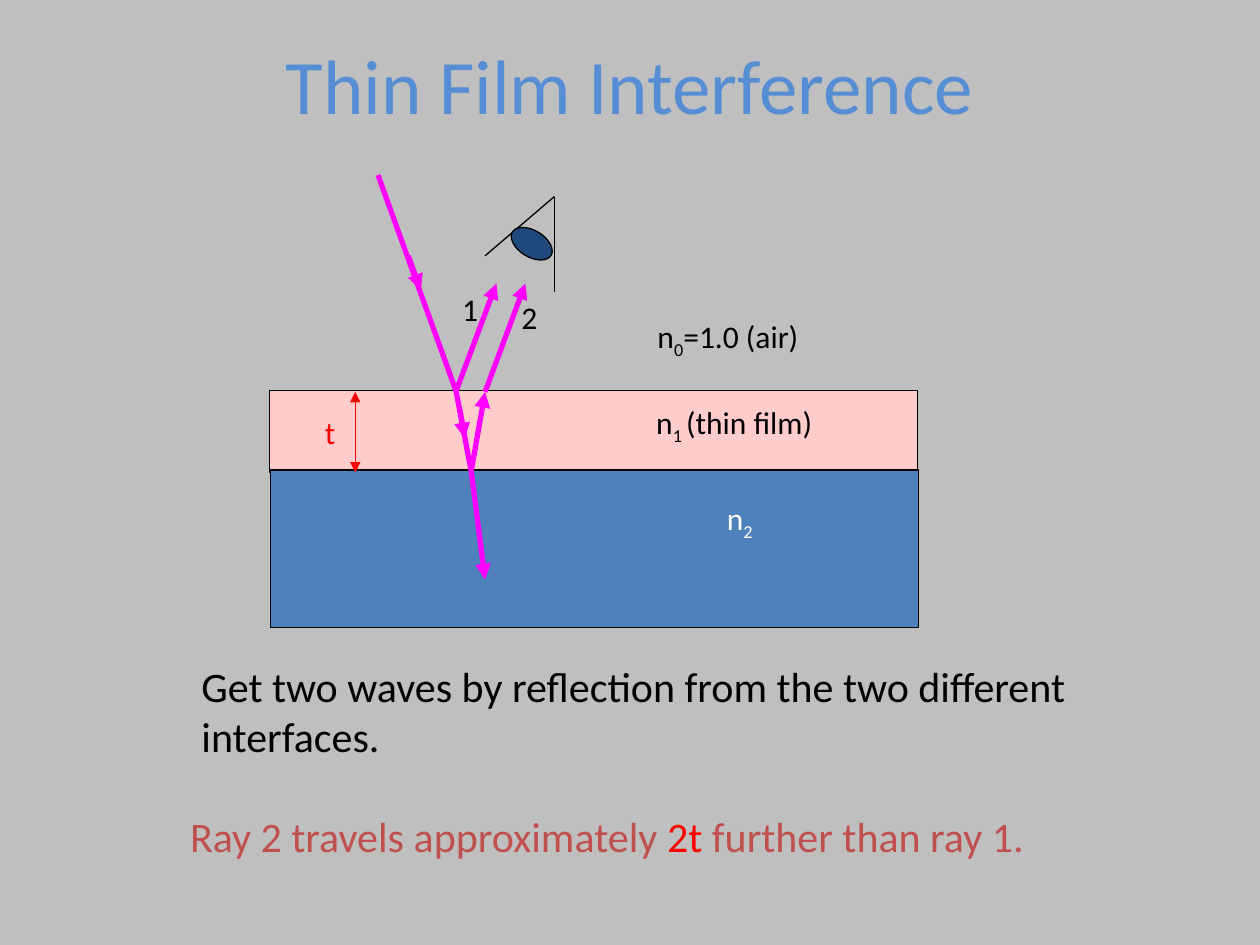
from dataclasses import dataclass

from lxml.etree import SubElement
from pptx import Presentation
from pptx.dml.color import RGBColor
from pptx.enum.shapes import MSO_CONNECTOR as Connector, MSO_SHAPE as Shape
from pptx.enum.text import MSO_ANCHOR as Anchor, PP_ALIGN as Align
from pptx.oxml.ns import qn
from pptx.util import Inches, Pt


@dataclass(frozen=True)
class Theme:
    font: str = "Calibri"
    background: str = "BFBFBF"
    title: str = "558ED5"
    ink: str = "000000"
    light: str = "FFFFFF"
    film: str = "FFCCCC"
    substrate: str = "4F81BD"
    pupil: str = "1F497D"
    ray: str = "FF00FF"
    accent: str = "FF0000"
    conclusion: str = "C0504D"
    title_size: int = 44
    body_size: int = 24
    label_size: int = 18
    thin: float = 0.75
    thick: float = 3


class SlideBuilder:
    """Draws on a grid of 100 columns by 75 rows."""

    def __init__(self, presentation, theme):
        self.theme = theme
        self.cell = presentation.slide_width / 100
        self.slide = presentation.slides.add_slide(presentation.slide_layouts[6])
        fill = self.slide.background.fill
        fill.solid()
        fill.fore_color.rgb = RGBColor.from_string(theme.background)

    def grid(self, *lengths):
        return [round(length * self.cell) for length in lengths]

    def text(self, box, runs, size, align=Align.LEFT, anchor=Anchor.TOP):
        """Each run is (text, colour) or (text, colour, baseline in percent)."""
        frame = self.slide.shapes.add_textbox(*self.grid(*box)).text_frame
        frame.word_wrap = True
        frame.vertical_anchor = anchor
        paragraph = frame.paragraphs[0]
        paragraph.alignment = align
        for content, color, *baseline in runs:
            run = paragraph.add_run()
            run.text = content
            run.font.name = self.theme.font
            run.font.size = Pt(size)
            run.font.color.rgb = RGBColor.from_string(color)
            if baseline:
                run.font._element.set("baseline", str(baseline[0] * 1000))

    def shape(self, kind, box, color, rotation=0):
        shape = self.slide.shapes.add_shape(kind, *self.grid(*box))
        shape.rotation = rotation
        shape.shadow.inherit = False
        shape.fill.solid()
        shape.fill.fore_color.rgb = RGBColor.from_string(color)
        shape.line.color.rgb = RGBColor.from_string(self.theme.ink)
        shape.line.width = Pt(self.theme.thin)

    def line(self, start, end, color, width, arrows=()):
        connector = self.slide.shapes.add_connector(
            Connector.STRAIGHT, *self.grid(*start, *end))
        connector.line.color.rgb = RGBColor.from_string(color)
        connector.line.width = Pt(width)
        properties = connector._element.spPr
        for arrow in arrows:
            SubElement(properties.find(qn("a:ln")), qn(f"a:{arrow}"), type="triangle")
        SubElement(properties, qn("a:effectLst"))

    def ray(self, start, end, arrow=True):
        self.line(start, end, self.theme.ray, self.theme.thick,
                  ["tailEnd"] if arrow else [])


def main():
    theme = Theme()
    presentation = Presentation()
    presentation.slide_width = Inches(10)
    presentation.slide_height = Inches(7.5)
    builder = SlideBuilder(presentation, theme)

    # Title
    builder.text((7.5, 0.4, 85, 12.5), [("Thin Film Interference", theme.title)],
                 theme.title_size, Align.CENTER, Anchor.MIDDLE)

    # Film on its substrate
    builder.shape(Shape.RECTANGLE, (21.4, 31, 51.4, 6.5), theme.film)
    builder.shape(Shape.RECTANGLE, (21.5, 37.3, 51.4, 12.5), theme.substrate)

    # Refractive indices
    for box, index, note, color in (
            ((51.1, 31.5, 21.4, 4), "1 ", "(thin film)", theme.ink),
            ((56.7, 39.1, 7.8, 5), "2", "", theme.light),
            ((51.2, 24.7, 24, 5), "0", "=1.0 (air)", theme.ink)):
        runs = [("n", color), (index, color, -25)]
        if note:
            runs.append((note, color))
        builder.text(box, runs, theme.label_size)

    # Film thickness
    builder.line((28.2, 31.1), (28.2, 37.5), theme.accent, theme.thin,
                 ["headEnd", "tailEnd"])

    # Eye
    eye_corner = (44, 15.6)
    for lid_end in ((38.5, 20.3), (44, 23.2)):
        builder.line(eye_corner, lid_end, theme.ink, theme.thin)
    builder.shape(Shape.OVAL, (40.4, 18.3, 3.6, 2.1), theme.pupil, 31.3)

    # Rays: incoming, reflected at each interface, and transmitted
    entry, bounce, leave = (36.2, 31.05), (37.4, 37.4), (38.5, 31.1)
    builder.ray((30, 13.9), entry, arrow=False)
    builder.ray((32.4, 20.3), (33.4, 23))
    builder.ray(entry, bounce, arrow=False)
    builder.ray((36.5, 32.5), (36.9, 34.8))
    builder.ray(entry, (39.4, 22.5))
    builder.ray(bounce, leave)
    builder.ray(leave, (41.7, 22.5))
    builder.ray(bounce, (38.5, 46))

    # Labels of the thickness and the two rays
    for box, label, color in (((24.8, 32.3, 2.6, 5), "t", theme.accent),
                              ((35.7, 22.5, 3.5, 5), "1", theme.ink),
                              ((40.4, 23.2, 4.9, 5), "2", theme.ink)):
        builder.text(box, [(label, color)], theme.label_size)

    # Explanation
    builder.text((15, 51.9, 80.8, 9.1),
                 [("Get two waves by reflection from the two different interfaces.",
                   theme.ink)], theme.body_size)
    builder.text((14.1, 63.8, 81.5, 5.1),
                 [("Ray 2 travels approximately ", theme.conclusion),
                  ("2t ", theme.accent),
                  ("further than ray 1.", theme.conclusion)], theme.body_size)

    presentation.save("out.pptx")


if __name__ == "__main__":
    main()
